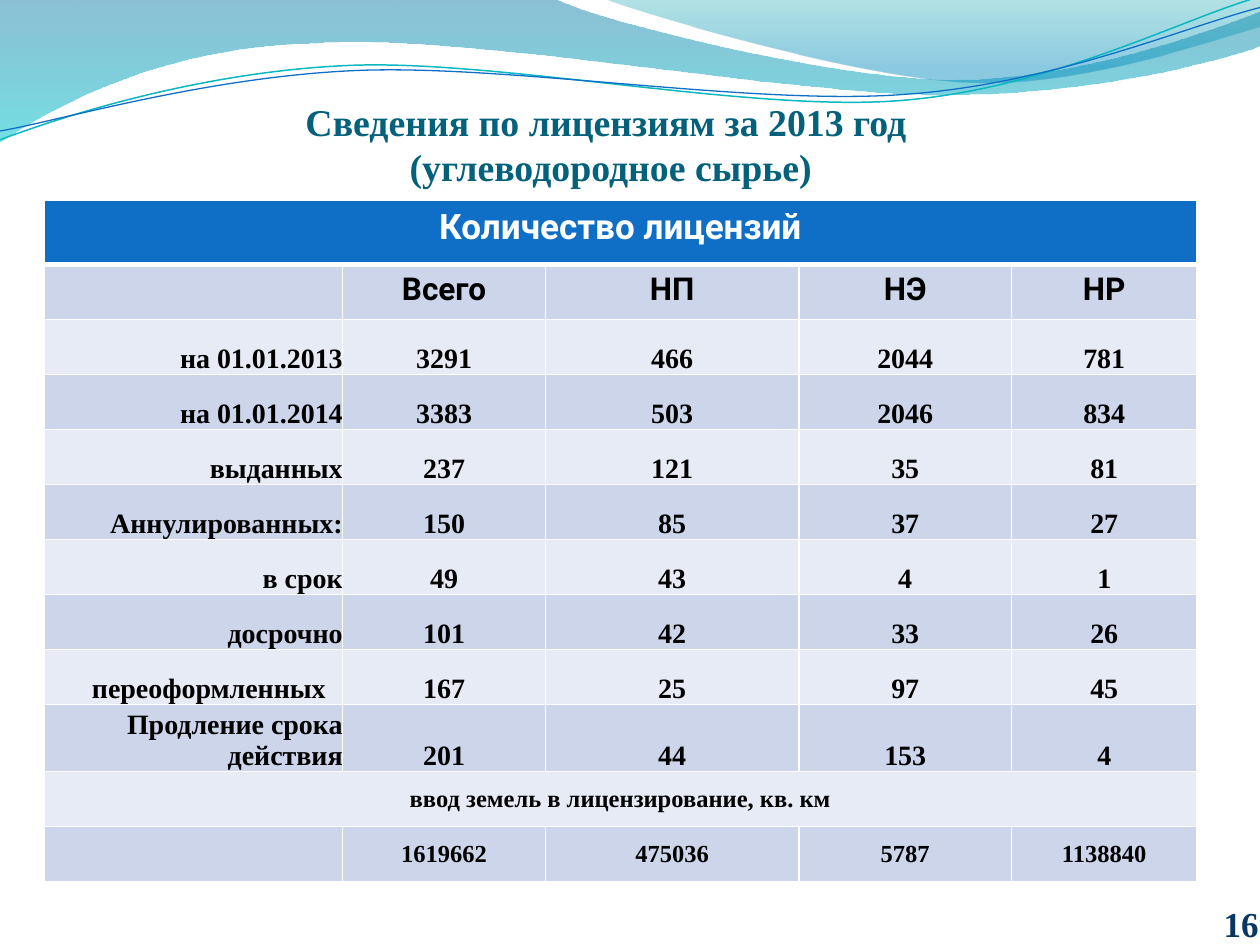
from dataclasses import dataclass
from typing import Optional

import lxml.etree
import pptx
import pptx.dml.color
import pptx.enum.text
import pptx.oxml.ns
import pptx.util

Inches = pptx.util.Inches
Pt = pptx.util.Pt
RGBColor = pptx.dml.color.RGBColor
Align = pptx.enum.text.PP_ALIGN
Anchor = pptx.enum.text.MSO_ANCHOR
qn = pptx.oxml.ns.qn

WHITE = RGBColor(0xFF, 0xFF, 0xFF)
BLACK = RGBColor(0x00, 0x00, 0x00)
BLUE = RGBColor(0x0F, 0x6F, 0xC6)
TEAL = RGBColor(0x0A, 0xB8, 0xBF)
TITLE_COLOR = RGBColor(0x04, 0x61, 0x7B)
NUMBER_COLOR = RGBColor(0x08, 0x37, 0x63)
BAND_DARK = RGBColor(0xCC, 0xD5, 0xEA)
BAND_LIGHT = RGBColor(0xE7, 0xEB, 0xF5)
SERIF = "Times New Roman"
SANS = "Roboto"


@dataclass(frozen=True)
class Stop:
    position: float
    color: RGBColor
    opacity: int


@dataclass(frozen=True)
class Wave:
    start: tuple
    segments: tuple
    stops: tuple = ()
    line: Optional[RGBColor] = None
    weight: float = 0


@dataclass(frozen=True)
class TextStyle:
    size: float
    color: RGBColor = BLACK
    font: str = SERIF
    align: Align = Align.CENTER


@dataclass(frozen=True)
class RowStyle:
    text: TextStyle
    anchor: Anchor = Anchor.BOTTOM
    side: float = 0
    edge: float = 0


WAVES = (
    Wave((0, 0), ((4.4, -0.01), (4.76, 0.17, 6.64, 0.63, 7.58, 0.63),
                  (8.53, 0.63, 9.58, 0.26, 10, 0.09), (10.01, 0.36),
                  (9.83, 0.44, 8.7, 0.76, 7.46, 0.75),
                  (6.22, 0.75, 3.82, 0.28, 2.57, 0.34),
                  (1.29, 0.36, 0.46, 0.83, -0.01, 1.13)),
         stops=(Stop(0, RGBColor(0x00, 0x74, 0xA1), 45),
                Stop(1, RGBColor(0x00, 0xC6, 0xCF), 55))),
    Wave((4.79, -0.01), ((5.09, 0.11, 6.82, 0.62, 7.69, 0.65),
                         (8.56, 0.69, 9.61, 0.32, 10, 0.21), (10, 0)),
         stops=(Stop(0, RGBColor(0x00, 0xA1, 0xA9), 30),
                Stop(0.8, RGBColor(0x00, 0x8B, 0xBF), 45))),
    Wave((0, 1.11), ((0.48, 0.93, 1.58, 0.57, 2.77, 0.52),
                     (3.95, 0.47, 5.93, 0.89, 7.13, 0.8),
                     (8.33, 0.71, 9.38, 0.15, 9.98, -0.02)),
         line=TEAL, weight=0.85),
    Wave((0, 1.04), ((0.47, 0.96, 1.64, 0.61, 2.83, 0.56),
                     (4.03, 0.51, 5.97, 0.84, 7.17, 0.75),
                     (8.36, 0.67, 9.41, 0.21, 10, 0.06)),
         line=BLUE, weight=0.75),
)

COLUMN_WIDTHS = (2.37, 1.61, 2.01, 1.69, 1.47)
HEADER_HEIGHT = Inches(0.51)
BODY_HEIGHT = Inches(4.8)
LICENSES = (
    ("Количество лицензий",),
    ("", "Всего", "НП", "НЭ", "НР"),
    ("на 01.01.2013", "3291", "466", "2044", "781"),
    ("на 01.01.2014", "3383", "503", "2046", "834"),
    ("выданных", "237", "121", "35", "81"),
    ("Аннулированных:", "150", "85", "37", "27"),
    ("в срок", "49", "43", "4", "1"),
    ("досрочно", "101", "42", "33", "26"),
    ("переоформленных", "167", "25", "97", "45"),
    ("Продление срока действия", "201", "44", "153", "4"),
    ("ввод земель в лицензирование, кв. км",),
    ("", "1619662", "475036", "5787", "1138840"),
)
HEADER = RowStyle(TextStyle(20, WHITE, SANS), Anchor.TOP, 0.1, 0.05)
COLUMN_NAMES = RowStyle(TextStyle(18, BLACK, SANS), Anchor.TOP, 0.1, 0.05)
COUNTS = RowStyle(TextStyle(16))
LAND = RowStyle(TextStyle(14), Anchor.MIDDLE)
ROW_STYLES = (HEADER, COLUMN_NAMES, *[COUNTS] * 8, LAND, LAND)
LABEL_STYLE = TextStyle(16, align=Align.RIGHT)
REISSUED_STYLE = TextStyle(16, align=Align.LEFT)
REISSUED_ROW = 8


def bend(ribbon, segments: tuple) -> None:
    straight = list(ribbon._element.spPr.iter(qn("a:lnTo")))
    for corner, segment in zip(straight, segments):
        if len(segment) == 2:
            continue
        corner.tag = qn("a:cubicBezTo")
        for index, (x, y) in enumerate((segment[:2], segment[2:4])):
            handle = lxml.etree.Element(
                qn("a:pt"), x=str(Inches(x) - ribbon.left), y=str(Inches(y) - ribbon.top))
            corner.insert(index, handle)


def draw_wave(slide, wave: Wave) -> None:
    builder = slide.shapes.build_freeform(*map(Inches, wave.start))
    corners = [(Inches(segment[-2]), Inches(segment[-1])) for segment in wave.segments]
    builder.add_line_segments(corners, close=bool(wave.stops))
    ribbon = builder.convert_to_shape()
    bend(ribbon, wave.segments)
    ribbon.shadow.inherit = False
    if not wave.stops:
        ribbon.fill.background()
        ribbon.line.color.rgb = wave.line
        ribbon.line.width = Pt(wave.weight)
        return
    ribbon.line.fill.background()
    ribbon.fill.gradient()
    ribbon.fill.gradient_angle = 270
    for target, stop in zip(ribbon.fill.gradient_stops, wave.stops):
        target.position = stop.position
        target.color.rgb = stop.color
    tints = ribbon._element.spPr.iter(qn("a:srgbClr"))
    for tint, stop in zip(tints, wave.stops):
        lxml.etree.SubElement(tint, qn("a:alpha"), val=str(stop.opacity * 1000))


def write(paragraph, lines: tuple, style: TextStyle) -> None:
    paragraph.alignment = style.align
    for index, line in enumerate(lines):
        if index:
            paragraph.add_line_break()
        run = paragraph.add_run()
        run.text = line
        run.font.size = Pt(style.size)
        run.font.name = style.font
        run.font.bold = True
        run.font.color.rgb = style.color
    lxml.etree.SubElement(paragraph._p, qn("a:endParaRPr"), sz=str(round(style.size * 100)))


def draw_text(slide, box: tuple, lines: tuple, style: TextStyle, top: float = 0) -> None:
    frame = slide.shapes.add_textbox(*map(Inches, box)).text_frame
    frame.word_wrap = True
    frame.vertical_anchor = Anchor.BOTTOM
    frame.margin_left = frame.margin_right = frame.margin_bottom = 0
    frame.margin_top = Inches(top)
    write(frame.paragraphs[0], lines, style)


def draw_borders(cell, row: int) -> None:
    widths = {"L": 1, "R": 1, "T": 3 if row == 1 else 1, "B": 3 if row == 0 else 1}
    properties = cell._tc.get_or_add_tcPr()
    for side, width in widths.items():
        border = lxml.etree.SubElement(properties, qn(f"a:ln{side}"), w=str(Pt(width)))
        paint = lxml.etree.SubElement(border, qn("a:solidFill"))
        lxml.etree.SubElement(paint, qn("a:srgbClr"), val=str(WHITE))


def draw_licenses(slide) -> None:
    table = slide.shapes.add_table(
        len(LICENSES), len(COLUMN_WIDTHS), Inches(0.35), Inches(1.59),
        Inches(sum(COLUMN_WIDTHS)), HEADER_HEIGHT + BODY_HEIGHT).table
    for column, width in zip(table.columns, COLUMN_WIDTHS):
        column.width = Inches(width)
    for row, (values, style) in enumerate(zip(LICENSES, ROW_STYLES)):
        table.rows[row].height = HEADER_HEIGHT if row == 0 else BODY_HEIGHT // 11
        band = BLUE if row == 0 else BAND_DARK if row % 2 else BAND_LIGHT
        for cell in table.rows[row].cells:
            draw_borders(cell, row)
            cell.fill.solid()
            cell.fill.fore_color.rgb = band
            cell.vertical_anchor = style.anchor
            cell.margin_left = cell.margin_right = Inches(style.side)
            cell.margin_top = cell.margin_bottom = Inches(style.edge)
        if len(values) == 1:
            table.cell(row, 0).merge(table.cell(row, len(COLUMN_WIDTHS) - 1))
        for column, value in enumerate(values):
            text = style.text
            if style is COUNTS and column == 0:
                text = REISSUED_STYLE if row == REISSUED_ROW else LABEL_STYLE
            if value:
                write(table.cell(row, column).text_frame.paragraphs[0], (value,), text)
    table.cell(REISSUED_ROW, 0).margin_left = Inches(0.38)


def main() -> None:
    deck = pptx.Presentation()
    deck.slide_width, deck.slide_height = Inches(10), Inches(7.5)
    slide = deck.slides.add_slide(deck.slide_layouts[6])
    for wave in WAVES:
        draw_wave(slide, wave)
    draw_text(slide, (0.12, 0.67, 9.38, 0.83),
              ("Сведения по лицензиям за 2013 год", " (углеводородное сырье)"),
              TextStyle(21.6, TITLE_COLOR), top=0.05)
    draw_licenses(slide)
    draw_text(slide, (7.66, 7.1, 2.33, 0.4), ("16",),
              TextStyle(20, NUMBER_COLOR, align=Align.RIGHT))
    deck.save("out.pptx")


if __name__ == "__main__":
    main()
